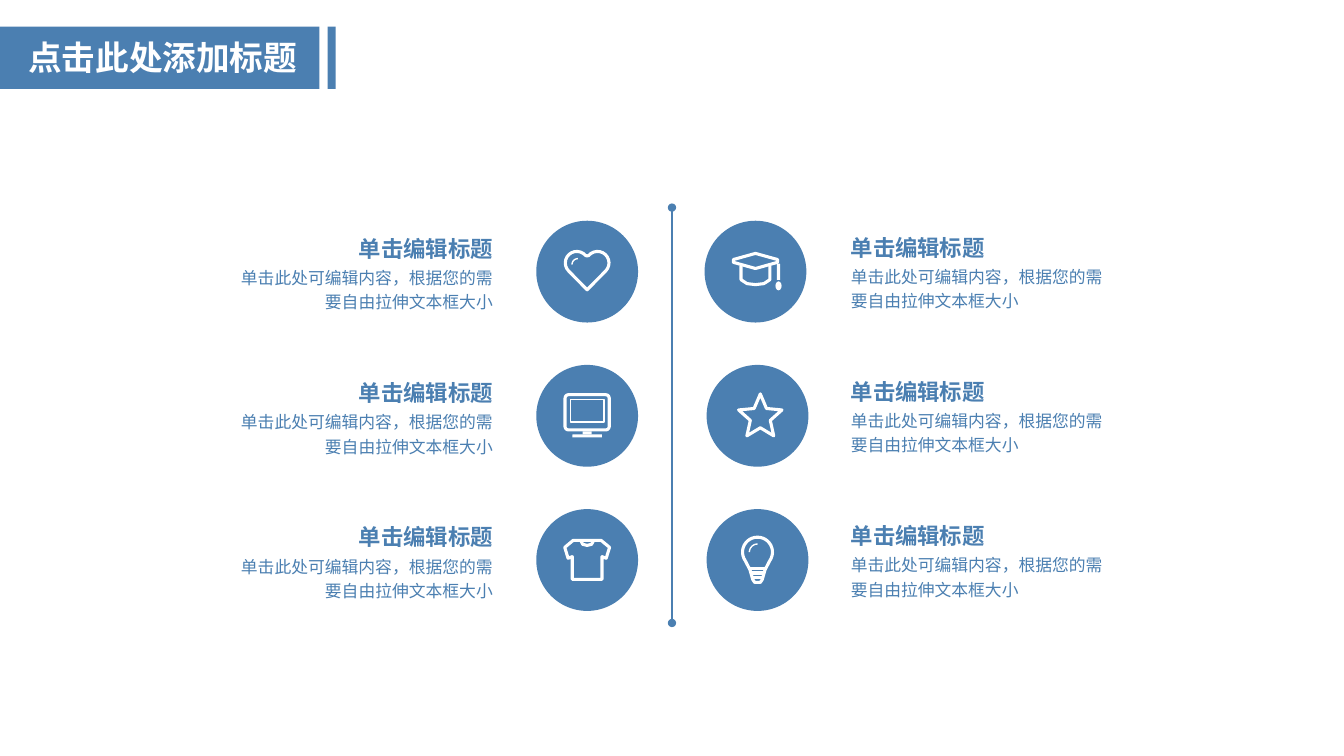
"""Build a slide with six icon topics on both sides of a vertical axis."""
from math import cos, radians, sin
from lxml.etree import SubElement
from pptx import Presentation
from pptx.dml.color import RGBColor
from pptx.enum.shapes import MSO_CONNECTOR, MSO_SHAPE
from pptx.enum.text import MSO_ANCHOR, MSO_AUTO_SIZE, PP_ALIGN
from pptx.oxml.ns import qn
from pptx.util import Pt

BLUE = RGBColor(0x4B, 0x7F, 0xB1)
WHITE = RGBColor(0xFF, 0xFF, 0xFF)
FONT = "Noto Sans CJK SC"
ROW_STEP = 103
FIRST_ROW = 194
DISC = 72.7
STROKE = 2.2


def arc(cx, cy, radius, start, end):
    angles = [radians(start + (end - start) * i / 12) for i in range(13)]
    return [(cx + radius * cos(a), cy + radius * sin(a)) for a in angles]


def write(tf, text, size, color, bold, align, name):
    p = tf.paragraphs[0]
    p.alignment = align
    r = p.add_run()
    r.text = text
    r.font.size, r.font.bold, r.font.name = Pt(size), bold, name
    r.font.color.rgb = color
    SubElement(r.font._element, qn("a:ea")).set("typeface", FONT)
    return p


halves = {
    "heart": [[(0, -11.2)] + arc(7.4, -6.2, 8.2, -140, 45) + [(0, 13)]],
    "cap": [[(0, -13), (15.8, -8.6), (15.8, -6.6), (0, -2.2)],
            [(0, 9.3), (6, 8.6), (10.3, 5.8), (10.3, -4)]],
    "shirt": [[(0, -14), (10, -14), (16, -9), (13.6, -1.2), (10.6, -2.4), (10.6, 13.8), (0, 13.8)],
              [(0, -10.4), (3.2, -11.2), (4.6, -14)]],
    "bulb": [arc(0, -5.6, 10.7, -90, 35) + [(5.4, 7), (3.4, 14), (2, 16), (0, 16)]]
            + [[(0, y), (w, y)] for y, w in ((5.8, 5.4), (9.3, 4.6), (12.6, 3.6))],
}
shines = {"heart": arc(-6.6, -5, 4.2, 180, 270), "bulb": arc(0, -5.6, 5.8, 180, 270)}
presets = {
    "cap": [(MSO_SHAPE.ROUNDED_RECTANGLE, 16.5, 0.2, 2.2, 11.6, 0),
            (MSO_SHAPE.OVAL, 16.5, 10.2, 4.4, 6.4, 0)],
    "monitor": [(MSO_SHAPE.RECTANGLE, 0, -3.6, 24, 15.9, 1),
                (MSO_SHAPE.ROUNDED_RECTANGLE, 0, -2.5, 31.6, 25.2, STROKE),
                (MSO_SHAPE.RECTANGLE, 0, 12.2, 6.4, 2, 0),
                (MSO_SHAPE.ROUNDED_RECTANGLE, 0, 14.4, 21, 2.2, 0)],
    "star": [(MSO_SHAPE.STAR_5_POINT, 2, -0.6, 31, 30, STROKE)],
}
corners = {MSO_SHAPE.ROUNDED_RECTANGLE: 0.1, MSO_SHAPE.STAR_5_POINT: 0.23}

prs = Presentation()
prs.slide_width, prs.slide_height = Pt(960), Pt(540)
s = prs.slides.add_slide(prs.slide_layouts[5])

columns = {"heart": (419.4, 0), "monitor": (419.4, 1), "shirt": (419.4, 2),
           "cap": (539.6, 0), "star": (541.1, 1), "bulb": (541.1, 2)}
discs = [(icon, cx, FIRST_ROW + row * ROW_STEP) for icon, (cx, row) in columns.items()]
blue_shapes = [(MSO_SHAPE.RECTANGLE, 0, 19, 228.2, 44.6), (MSO_SHAPE.RECTANGLE, 234, 19, 5.8, 44.6)]
blue_shapes += [(MSO_SHAPE.OVAL, cx - DISC / 2, cy - DISC / 2, DISC, DISC) for icon, cx, cy in discs]
for kind, x, y, w, h in blue_shapes:
    sp = s.shapes.add_shape(kind, Pt(x), Pt(y), Pt(w), Pt(h))
    sp.shadow.inherit = False
    sp.fill.solid()
    sp.fill.fore_color.rgb = BLUE
    sp.line.fill.background()

title = s.shapes.title
s.shapes.element.append(title.element)
title.left, title.top, title.width, title.height = Pt(13), Pt(23), Pt(226.8), Pt(36.4)
tf = title.text_frame
tf.word_wrap = True
tf.auto_size = MSO_AUTO_SIZE.SHAPE_TO_FIT_TEXT
tf.vertical_anchor = MSO_ANCHOR.TOP
write(tf, "点击此处添加标题", 24, WHITE, True, PP_ALIGN.LEFT, "Arial")

axis = s.shapes.add_connector(MSO_CONNECTOR.STRAIGHT, Pt(480), Pt(148.3), Pt(480), Pt(445))
axis.line.color.rgb = BLUE
axis.line.width = Pt(1.5)
ln = axis.line._get_or_add_ln()
for end in ("a:headEnd", "a:tailEnd"):
    SubElement(ln, qn(end)).set("type", "oval")
SubElement(axis.element.spPr, qn("a:effectLst"))

for icon, cx, cy in discs:
    strokes = []
    for half in halves.get(icon, []):
        mirrored = [(-x, y) for x, y in reversed(half[1:])]
        strokes.append((mirrored + half, abs(half[-1][0]) < 0.01, STROKE))
    if icon in shines:
        strokes.append((shines[icon], False, 1))
    parts = []
    for outline, closed, weight in strokes:
        pts = [(Pt(cx + x), Pt(cy + y)) for x, y in outline]
        fb = s.shapes.build_freeform(*pts[0])
        fb.add_line_segments(pts[1:], close=closed)
        parts.append((fb.convert_to_shape(), weight))
    for kind, dx, dy, w, h, weight in presets.get(icon, []):
        sp = s.shapes.add_shape(kind, Pt(cx + dx - w / 2), Pt(cy + dy - h / 2), Pt(w), Pt(h))
        if kind in corners:
            sp.adjustments[0] = corners[kind]
        parts.append((sp, weight))
    for sp, weight in parts:
        sp.shadow.inherit = False
        if weight:
            sp.fill.background()
            sp.line.color.rgb = WHITE
            sp.line.width = Pt(weight)
            SubElement(sp.line._get_or_add_ln(), qn("a:round"))
        else:
            sp.fill.solid()
            sp.fill.fore_color.rgb = WHITE
            sp.line.fill.background()

texts = [("单击编辑标题", 16, True, 0, 110.2, 21.6),
         ("单击此处可编辑内容，根据您的需要自由拉伸文本框大小", 12, False, 24.3, 183.6, 33.1)]
for row in range(3):
    for align, edge, top in ((PP_ALIGN.RIGHT, 352.1, 164.2), (PP_ALIGN.LEFT, 607.7, 163.4)):
        for text, size, bold, dy, w, h in texts:
            x = edge - w if align == PP_ALIGN.RIGHT else edge
            tb = s.shapes.add_textbox(Pt(x), Pt(top + dy + row * ROW_STEP), Pt(w), Pt(h))
            tf = tb.text_frame
            tf.word_wrap = True
            tf.auto_size = MSO_AUTO_SIZE.SHAPE_TO_FIT_TEXT
            tf.margin_left = tf.margin_top = tf.margin_right = tf.margin_bottom = 0
            write(tf, text, size, BLUE, bold, align, FONT).line_spacing = 1.2

prs.save("out.pptx")
